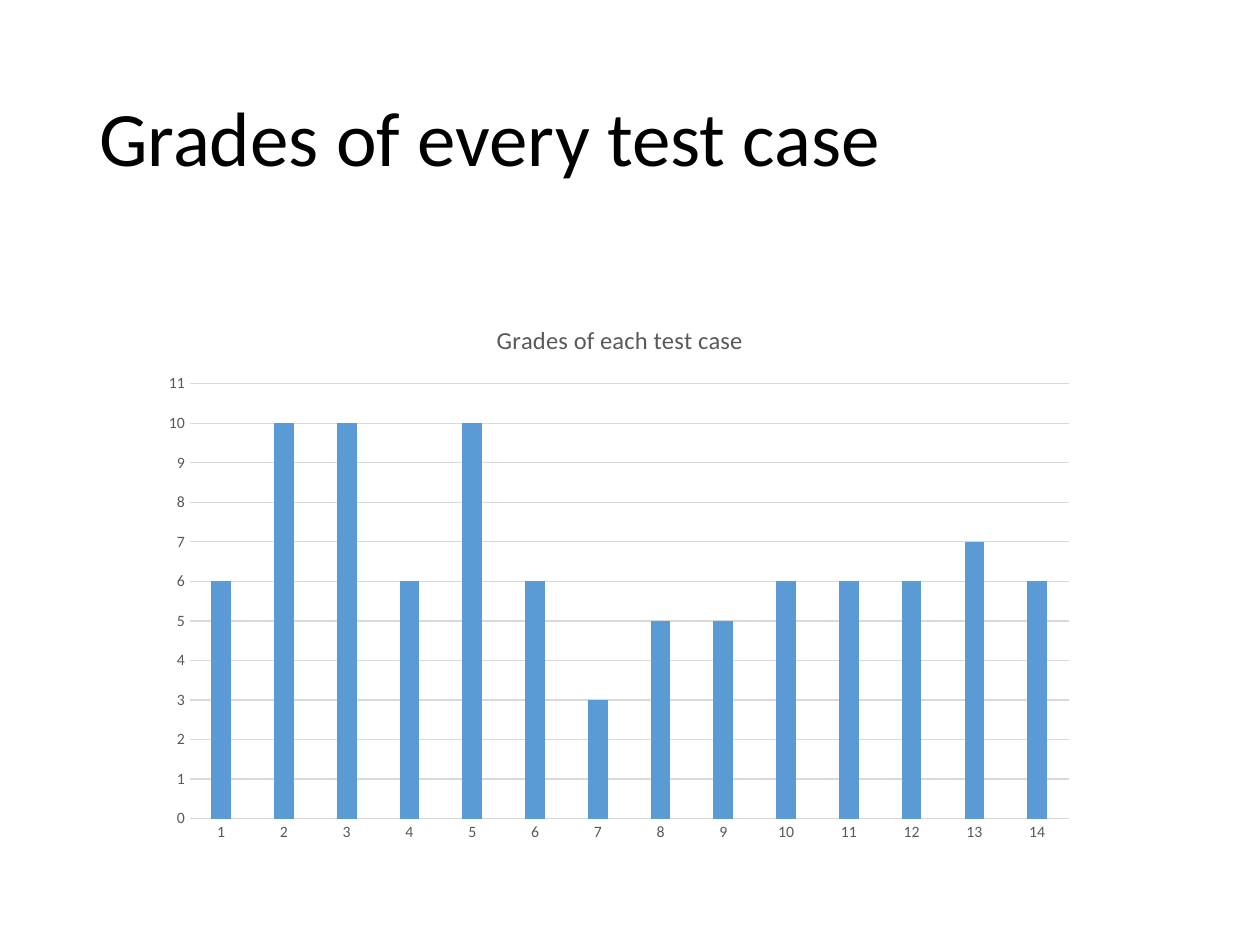
from lxml import etree
from pptx import Presentation
from pptx import util as u
from pptx.chart.data import CategoryChartData
from pptx.dml.color import RGBColor
from pptx.enum import chart as ch, text
from pptx.oxml.ns import qn

GREY, RULE, BLUE = "595959", "D9D9D9", "5B9BD5"
GRADES = [6, 10, 10, 6, 10, 6, 3, 5, 5, 6, 6, 6, 7, 6]


def color(code):
    return RGBColor.from_string(code)


def style(font, size, code):
    font.name = "Calibri"
    font.size = u.Pt(size)
    font.bold = False
    font.color.rgb = color(code)


def rule(line):
    line.color.rgb = color(RULE)
    line.width = u.Pt(0.75)


def add_title(slide, words, box):
    frame = slide.shapes.add_textbox(*map(u.Inches, box)).text_frame
    frame.word_wrap = True
    frame.vertical_anchor = text.MSO_ANCHOR.MIDDLE
    frame.text = words
    para = frame.paragraphs[0]
    para.line_spacing = 0.9
    style(para.runs[0].font, 44, "000000")


def set_plot(chart, **area):
    """Fix the inner plot area, in fractions of the chart."""
    plot = chart.plots[0]._element.getparent()
    for old in plot.findall(qn("c:layout")):
        plot.remove(old)
    layout = etree.Element(qn("c:layout"))
    plot.insert(0, layout)
    manual = etree.SubElement(layout, qn("c:manualLayout"))
    parts = {"layoutTarget": "inner", "xMode": "edge", "yMode": "edge", **area}
    for name, val in parts.items():
        etree.SubElement(manual, qn("c:" + name)).set("val", str(val))


def add_bars(slide, words, grades, box):
    data = CategoryChartData()
    data.categories = [str(n) for n in range(1, len(grades) + 1)]
    data.add_series("Series 1", grades)
    kind = ch.XL_CHART_TYPE.COLUMN_CLUSTERED
    chart = slide.shapes.add_chart(kind, *map(u.Inches, box), data).chart
    style(chart.font, 10, "000000")
    chart.has_legend = False

    # Heading
    chart.has_title = True
    head = chart.chart_title
    head.include_in_layout = False
    head.text_frame.text = words
    style(head.text_frame.paragraphs[0].runs[0].font, 14, GREY)

    # Bars
    plot = chart.plots[0]
    plot.gap_width, plot.overlap = 219, -27
    plot.vary_by_categories = False
    fill = plot.series[0].format.fill
    fill.solid()
    fill.fore_color.rgb = color(BLUE)

    # Axes
    cats, vals = chart.category_axis, chart.value_axis
    for axis in (cats, vals):
        axis.major_tick_mark = axis.minor_tick_mark = ch.XL_TICK_MARK.NONE
        style(axis.tick_labels.font, 9, GREY)
    rule(cats.format.line)
    vals.format.line.fill.background()
    vals.minimum_scale, vals.maximum_scale, vals.major_unit = 0, 11, 1
    rule(vals.major_gridlines.format.line)
    set_plot(chart, x=0.04, y=0.15, w=0.94, h=0.79)


def main():
    deck = Presentation()
    deck.slide_width, deck.slide_height = u.Inches(10), u.Inches(7.5)
    slide = deck.slides.add_slide(deck.slide_layouts[6])
    add_title(slide, "Grades of every test case", (0.69, 0.4, 8.62, 1.45))
    add_bars(slide, "Grades of each test case", GRADES, (1.21, 2.39, 7.42, 4.37))
    deck.save("out.pptx")


if __name__ == "__main__":
    main()
